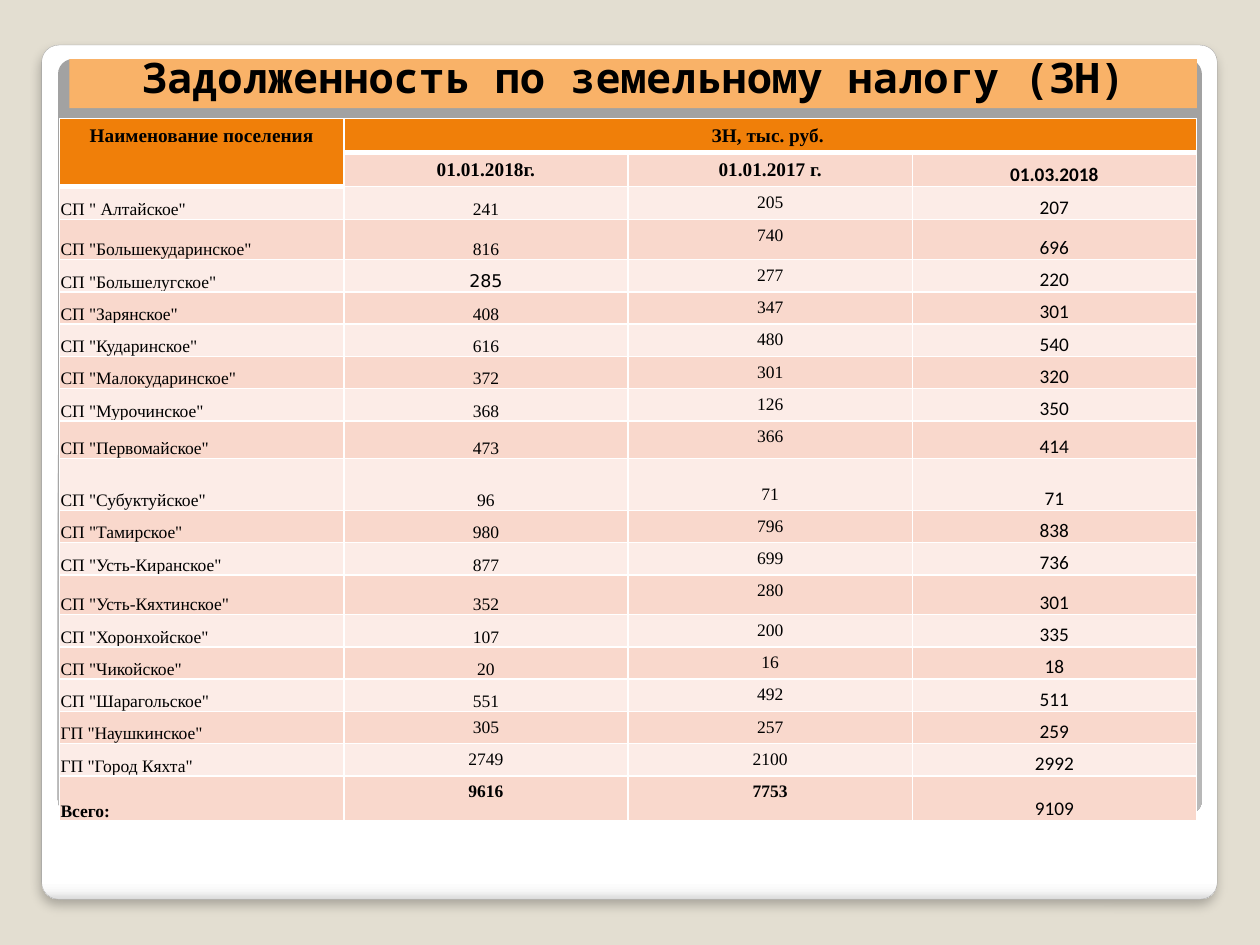
import dataclasses

import lxml.etree
import pptx
import pptx.dml.color
import pptx.enum.shapes
import pptx.enum.text
import pptx.oxml
import pptx.oxml.ns
import pptx.util

Cm = pptx.util.Cm
Pt = pptx.util.Pt
ANCHOR = pptx.enum.text.MSO_ANCHOR
ALIGN = pptx.enum.text.PP_ALIGN
qn = pptx.oxml.ns.qn


@dataclasses.dataclass(frozen=True)
class Theme:
    background: str = "E3DED1"
    title_fill: str = "F9B268"
    header_fill: str = "F07F09"
    odd_fill: str = "F9D8CC"
    even_fill: str = "FCECE7"
    border: str = "FFFFFF"
    frame_line: str = "A4A4A4"
    text: str = "000000"
    serif: str = "Times New Roman"
    sans: str = "Calibri"
    wide_sans: str = "DejaVu Sans"
    mono: str = "Noto Sans Mono"
    title_size: int = 24
    large_size: int = 11
    body_size: int = 10


THEME = Theme()

TITLE = "Задолженность по земельному налогу (ЗН)"
HEADER = ("Наименование поселения", "ЗН, тыс. руб. ")
DATES = ("01.01.2018г.", "01.01.2017 г.", "01.03.2018")
DEBTS = [
    ('СП " Алтайское"', 241, 205, 207),
    ('СП "Большекударинское"', 816, 740, 696),
    ('СП "Большелугское"', 285, 277, 220),
    ('СП "Зарянское"', 408, 347, 301),
    ('СП "Кударинское"', 616, 480, 540),
    ('СП "Малокударинское"', 372, 301, 320),
    ('СП "Мурочинское"', 368, 126, 350),
    ('СП "Первомайское"', 473, 366, 414),
    ('СП "Субуктуйское"', 96, 71, 71),
    ('СП "Тамирское"', 980, 796, 838),
    ('СП "Усть-Киранское"', 877, 699, 736),
    ('СП "Усть-Кяхтинское"', 352, 280, 301),
    ('СП "Хоронхойское"', 107, 200, 335),
    ('СП "Чикойское"', 20, 16, 18),
    ('СП "Шарагольское"', 551, 492, 511),
    ('ГП "Наушкинское"', 305, 257, 259),
    ('ГП "Город Кяхта"', 2749, 2100, 2992),
    ("Всего:", 9616, 7753, 9109),
]
FIRST_DEBT_ROW = 2
FIRST_TOWN_ROW = 17
TOTAL_ROW = 19
ROW_HEIGHT = 0.65
SPECIAL_HEIGHTS = {0: 0.68, 1: 0.68, 2: 0.66, 3: 0.81, 9: 0.76, 10: 1.03, 13: 0.8, 19: 0.91}


def color(value):
    return pptx.dml.color.RGBColor.from_string(value)


def write(frame, text, *, size=THEME.body_size, font=THEME.serif, bold=False, align=ALIGN.CENTER):
    paragraph = frame.paragraphs[0]
    paragraph.alignment = align
    run = paragraph.add_run()
    run.text = text
    run.font.size = Pt(size)
    run.font.name = font
    run.font.bold = bold
    run.font.color.rgb = color(THEME.text)


def add_panel(slide, left, top, width, height, stops, direction):
    panel = slide.shapes.add_shape(
        pptx.enum.shapes.MSO_SHAPE.ROUNDED_RECTANGLE, Cm(left), Cm(top), Cm(width), Cm(height))
    panel.adjustments[0] = 0.02
    panel.shadow.inherit = False
    panel.line.fill.background()
    panel.fill.background()
    stop_xml = "".join(
        f'<a:gs pos="{position * 1000}"><a:srgbClr val="{value}"/></a:gs>' for position, value in stops)
    gradient = pptx.oxml.parse_xml(
        f'<a:gradFill {pptx.oxml.ns.nsdecls("a")} rotWithShape="1">'
        f"<a:gsLst>{stop_xml}</a:gsLst>{direction}</a:gradFill>")
    properties = panel.element.spPr
    properties.replace(properties.find(qn("a:noFill")), gradient)
    return panel


def add_shadow(panel):
    shadow = pptx.oxml.parse_xml(
        f'<a:outerShdw {pptx.oxml.ns.nsdecls("a")} blurRad="{Pt(6)}" dist="{Pt(4)}" '
        'dir="5400000" algn="t" rotWithShape="0"><a:srgbClr val="000000">'
        '<a:alpha val="25000"/></a:srgbClr></a:outerShdw>')
    panel.element.spPr.find(qn("a:effectLst")).append(shadow)


def add_backdrop(slide):
    page = add_panel(
        slide, 0.84, 0.91, 23.7, 17.22,
        [(0, "FFFFFF"), (98, "FFFFFF"), (99, "F7F7F7"), (100, "DADADA")],
        '<a:lin ang="5400000" scaled="0"/>')
    page.line.color.rgb = color(THEME.frame_line)
    page.line.width = Pt(0.16)
    add_shadow(page)
    add_panel(
        slide, 1.17, 1.19, 23.06, 15.24,
        [(0, "FFFFFF"), (55, "E1E1E1"), (100, "A2A2A2")],
        '<a:path path="circle"><a:fillToRect l="50000" t="175000" r="50000" b="-75000"/></a:path>')


def place_title(slide):
    title = slide.shapes.title
    title.element.getparent().append(title.element)
    title.left, title.top, title.width, title.height = Cm(1.4), Cm(1.19), Cm(22.73), Cm(0.99)
    title.fill.solid()
    title.fill.fore_color.rgb = color(THEME.title_fill)
    title.text_frame.vertical_anchor = ANCHOR.BOTTOM
    title.text_frame.auto_size = pptx.enum.text.MSO_AUTO_SIZE.NONE
    write(title.text_frame, TITLE, size=THEME.title_size, font=THEME.mono, bold=True)


def is_header(row, column):
    return row == 0 or (row == 1 and column == 0)


def style_cell(cell, row, column):
    cell.fill.solid()
    band = THEME.odd_fill if row % 2 else THEME.even_fill
    cell.fill.fore_color.rgb = color(THEME.header_fill if is_header(row, column) else band)
    top = 3 if row and is_header(row - 1, column) else 1
    bottom = 3 if is_header(row, column) else 1
    properties = cell._tc.get_or_add_tcPr()
    for index, (side, width) in enumerate((("L", 1), ("R", 1), ("T", top), ("B", bottom))):
        border = lxml.etree.Element(qn(f"a:ln{side}"), w=str(Pt(width)))
        fill = lxml.etree.SubElement(border, qn("a:solidFill"))
        lxml.etree.SubElement(fill, qn("a:srgbClr"), val=THEME.border)
        properties.insert(index, border)


def seat_at_bottom(cell, side, top):
    cell.vertical_anchor = ANCHOR.BOTTOM
    cell.margin_left = cell.margin_right = Cm(side)
    cell.margin_top, cell.margin_bottom = Cm(top), Cm(0)


def fill_debt_row(table, row, debt):
    is_total = row == TOTAL_ROW
    name, current, previous, march = (table.cell(row, column) for column in range(4))
    seat_at_bottom(name, 0.02, 0.02)
    seat_at_bottom(march, 0.02, 0.02)
    if row < FIRST_TOWN_ROW:
        seat_at_bottom(current, 0.17, 0)
    if debt[0] == 'СП "Субуктуйское"':
        previous.margin_top = Cm(0.53)
    current_font = THEME.wide_sans if debt[0] == 'СП "Большелугское"' else THEME.serif
    write(name.text_frame, debt[0], bold=is_total, align=ALIGN.LEFT)
    write(current.text_frame, str(debt[1]), font=current_font, bold=is_total)
    write(previous.text_frame, str(debt[2]), bold=is_total)
    write(march.text_frame, str(debt[3]), size=THEME.large_size, font=THEME.sans)


def add_debt_table(slide):
    heights = [SPECIAL_HEIGHTS.get(row, ROW_HEIGHT) for row in range(FIRST_DEBT_ROW + len(DEBTS))]
    table = slide.shapes.add_table(
        len(heights), 4, Cm(1.2), Cm(2.39), Cm(22.92), Cm(sum(heights))).table
    for row, height in enumerate(heights):
        table.rows[row].height = Cm(height)
        for column in range(4):
            style_cell(table.cell(row, column), row, column)
    table.cell(0, 0).merge(table.cell(1, 0))
    table.cell(0, 1).merge(table.cell(0, 3))
    for column, heading in enumerate(HEADER):
        write(table.cell(0, column).text_frame, heading, size=THEME.large_size, bold=True)
    for column, date in enumerate(DATES, 1):
        font = THEME.sans if column == 3 else THEME.serif
        write(table.cell(1, column).text_frame, date, size=THEME.large_size, font=font, bold=True)
    seat_at_bottom(table.cell(1, 3), 0.02, 0.02)
    for row, debt in enumerate(DEBTS, FIRST_DEBT_ROW):
        fill_debt_row(table, row, debt)


def main():
    presentation = pptx.Presentation()
    presentation.slide_width, presentation.slide_height = Cm(25.4), Cm(19.05)
    slide = presentation.slides.add_slide(presentation.slide_layouts[5])
    slide.background.fill.solid()
    slide.background.fill.fore_color.rgb = color(THEME.background)
    add_backdrop(slide)
    place_title(slide)
    add_debt_table(slide)
    presentation.save("out.pptx")


if __name__ == "__main__":
    main()
